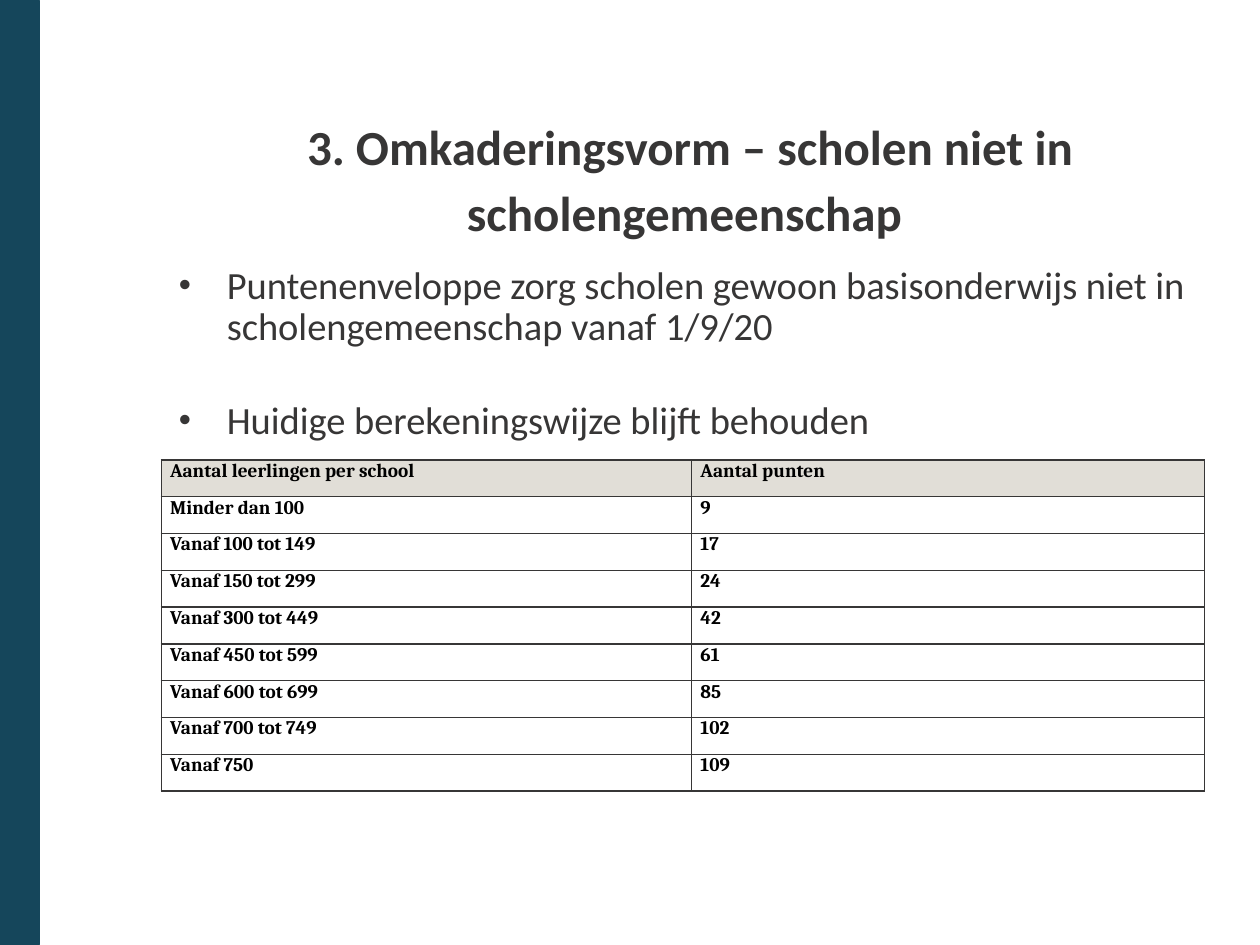
from dataclasses import dataclass

from lxml import etree
from pptx import Presentation
from pptx.dml.color import RGBColor
from pptx.enum import shapes, text
from pptx.oxml import ns
from pptx.util import Inches, Pt


@dataclass(frozen=True)
class Theme:
    ink: RGBColor = RGBColor.from_string("373636")
    bar: RGBColor = RGBColor.from_string("15465B")
    header: RGBColor = RGBColor.from_string("E1DED7")
    cell_ink: RGBColor = RGBColor.from_string("000000")
    heading_font: str = "Calibri"
    table_font: str = "Cambria"
    title_size: int = 28
    body_size: int = 22
    table_size: int = 11


THEME = Theme()

BULLETS = [
    "Puntenenveloppe zorg scholen gewoon basisonderwijs niet in "
    "scholengemeenschap vanaf 1/9/20",
    "Huidige berekeningswijze blijft behouden",
]

POINTS = [
    ("Aantal leerlingen per school", "Aantal punten"),
    ("Minder dan 100", "9"),
    ("Vanaf 100 tot 149", "17"),
    ("Vanaf 150 tot 299", "24"),
    ("Vanaf 300 tot 449", "42"),
    ("Vanaf 450 tot 599", "61"),
    ("Vanaf 600 tot 699", "85"),
    ("Vanaf 700 tot 749", "102"),
    ("Vanaf 750", "109"),
]


def style_font(paragraph, name, size, color, bold=False):
    font = paragraph.font
    font.name, font.size, font.bold = name, Pt(size), bold
    font.color.rgb = color


def place(shape, left, top, width, height):
    shape.left, shape.top = Inches(left), Inches(top)
    shape.width, shape.height = Inches(width), Inches(height)


def set_margins(frame, side=0, top=0):
    """Set the side and top insets in inches, with none at the bottom."""
    frame.margin_left = frame.margin_right = Inches(side)
    frame.margin_top, frame.margin_bottom = Inches(top), 0


def add_side_bar(slide, height):
    bar = slide.shapes.add_shape(
        shapes.MSO_SHAPE.RECTANGLE, 0, 0, Inches(0.31), height)
    bar.shadow.inherit = False
    bar.fill.solid()
    bar.fill.fore_color.rgb = THEME.bar
    bar.line.color.rgb = THEME.bar
    bar.line.width = Pt(0.5)


def fill_title(title):
    place(title, 1.42, 0.83, 8.11, 1.12)
    frame = title.text_frame
    set_margins(frame)
    frame.auto_size = text.MSO_AUTO_SIZE.NONE
    frame.vertical_anchor = text.MSO_ANCHOR.MIDDLE
    frame.text = "3. Omkaderingsvorm – scholen niet in scholengemeenschap "
    heading = frame.paragraphs[0]
    heading.alignment = text.PP_ALIGN.CENTER
    heading.line_spacing = Pt(38)
    style_font(heading, THEME.heading_font, THEME.title_size, THEME.ink, True)


def add_bullet(paragraph):
    properties = paragraph._p.get_or_add_pPr()
    properties.set("marL", str(Inches(0.38)))
    properties.set("indent", str(-Inches(0.38)))
    etree.SubElement(properties, ns.qn("a:buSzPct"), val="90000")
    etree.SubElement(properties, ns.qn("a:buChar"), char="•")


def fill_body(body):
    place(body, 1.42, 1.69, 8.11, 4.02)
    frame = body.text_frame
    set_margins(frame, top=0.42)
    frame.auto_size = text.MSO_AUTO_SIZE.NONE
    frame.text = "\n".join(BULLETS)
    for index, item in enumerate(frame.paragraphs):
        item.line_spacing = 0.9
        item.space_before = Pt(30 if index else 0)
        add_bullet(item)
        style_font(item, THEME.heading_font, THEME.body_size, THEME.ink)


def add_borders(cell):
    properties = cell._tc.get_or_add_tcPr()
    for side in ("lnL", "lnR", "lnT", "lnB"):
        line = etree.SubElement(properties, ns.qn(f"a:{side}"), w=str(Pt(1)))
        fill = etree.SubElement(line, ns.qn("a:solidFill"))
        etree.SubElement(fill, ns.qn("a:srgbClr"), val=str(THEME.ink))


def fill_cell(cell, content, is_header):
    set_margins(cell, side=0.07)
    add_borders(cell)
    if is_header:
        cell.fill.solid()
        cell.fill.fore_color.rgb = THEME.header
    else:
        cell.fill.background()
    cell.text = content
    paragraph = cell.text_frame.paragraphs[0]
    paragraph.alignment = text.PP_ALIGN.JUSTIFY
    style_font(paragraph, THEME.table_font, THEME.table_size,
               THEME.cell_ink, True)


def add_points_table(slide):
    widths, height = (4.21, 4.07), 2.63
    table = slide.shapes.add_table(
        len(POINTS), len(widths), Inches(1.28), Inches(3.65),
        Inches(sum(widths)), Inches(height)).table
    table.first_row = table.horz_banding = False
    for column, width in zip(table.columns, widths):
        column.width = Inches(width)
    for row_index, (row, contents) in enumerate(zip(table.rows, POINTS)):
        row.height = Inches(height / len(POINTS))
        for cell, content in zip(row.cells, contents):
            fill_cell(cell, content, row_index == 0)


def main():
    deck = Presentation()
    deck.slide_width, deck.slide_height = Inches(10), Inches(7.5)
    slide = deck.slides.add_slide(deck.slide_layouts[1])
    add_side_bar(slide, deck.slide_height)
    fill_title(slide.shapes.title)
    fill_body(slide.placeholders[1])
    add_points_table(slide)
    deck.save("out.pptx")


if __name__ == "__main__":
    main()
